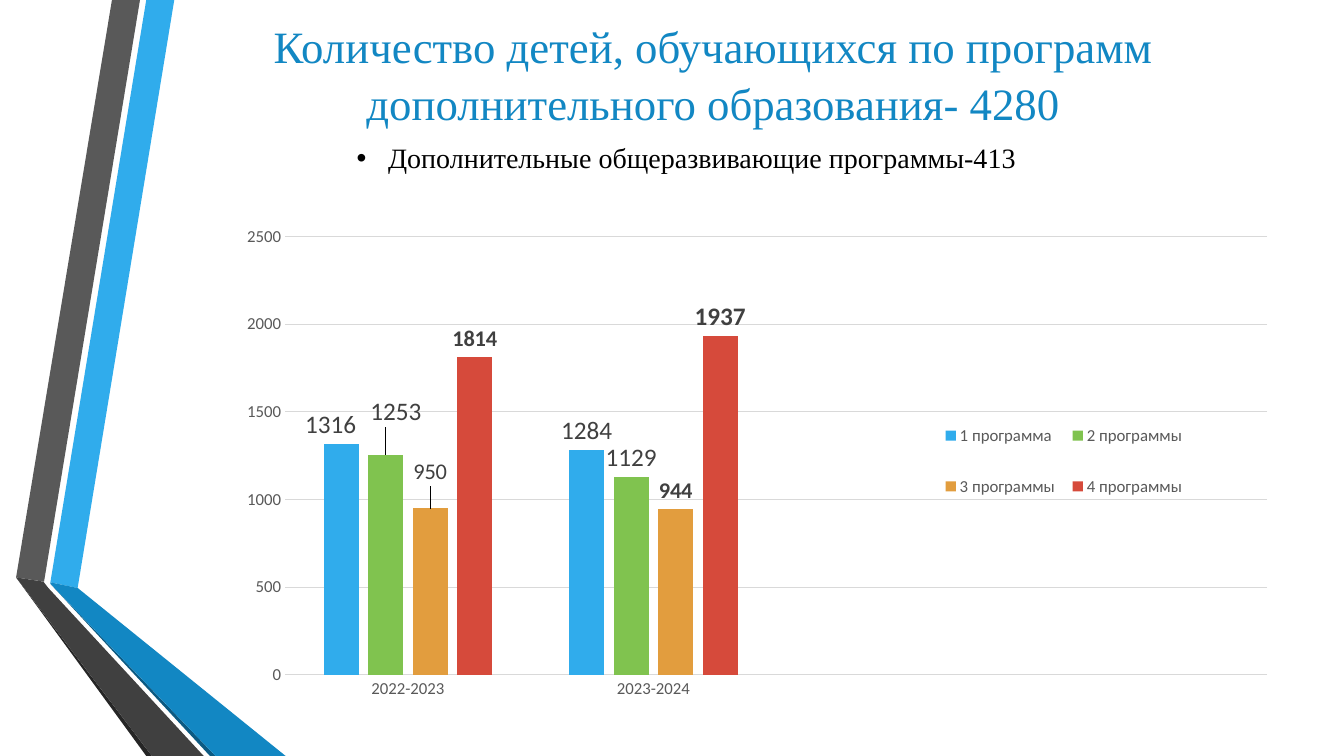
from pptx import Presentation
from pptx.chart.data import CategoryChartData
from pptx.dml.color import RGBColor
from pptx.enum import chart as ch, text as tx
from pptx.oxml import parse_xml
from pptx.oxml.ns import nsdecls
from pptx.util import Pt

COLORS = {
    "blue": "30ACEC", "deep_blue": "1287C3", "navy": "0C5A82",
    "gray": "595959", "dark_gray": "404040", "near_black": "262626",
    "green": "80C34F", "orange": "E29D3E", "red": "D64A3B",
    "grid": "D9D9D9", "black": "000000",
}
SERIF, SANS = "Times New Roman", "Calibri"

# Ribbon outlines in points, from back to front
RIBBONS = [
    ("blue", [(36, 416), (55.5, 420), (124.5, 0), (104.5, 0)]),
    ("gray", [(100, 0), (80, 0), (11.5, 412.5), (31.5, 415.5)]),
    ("near_black", [(11.5, 412.5), (104.5, 540), (108.5, 540)]),
    ("navy", [(36, 417), (150, 540), (154, 540)]),
    ("deep_blue", [(36, 416), (36, 417), (154, 540), (204, 540), (55.5, 420)]),
    ("dark_gray", [(145.5, 540), (34.5, 420), (31, 415.5), (11.5, 412.5), (108.5, 540)]),
]

YEARS = ["2022-2023", "2023-2024", "", ""]  # two empty slots hold the legend
# Name, colour, values, and per label: size, bold, shift (x, y), own text
PROGRAMS = [
    ("1 программа", "blue", (1316, 1284),
     [(18, False, (-0.01, 0), None), (18, False, None, None)]),
    ("2 программы", "green", (1253, 1129),
     [(18, False, (0.01, -0.04), None), (18, False, None, None)]),
    ("3 программы", "orange", (950, 944),
     [(16, False, (0, -0.03), None), (16, True, None, None)]),
    ("4 программы", "red", (1814, 1934),
     [(16, True, None, None), (18, True, None, "1937")]),
]


def rgb(name):
    return RGBColor.from_string(COLORS[name])


def style_font(font, face, size, color, bold=False):
    font.name, font.size, font.bold = face, Pt(size), bold
    font.color.rgb = rgb(color)


def add_ribbon(slide, color, points):
    start, *rest = [(Pt(x), Pt(y)) for x, y in points]
    builder = slide.shapes.build_freeform(*start)
    builder.add_line_segments(rest, close=True)
    ribbon = builder.convert_to_shape()
    ribbon.shadow.inherit = False
    ribbon.fill.solid()
    ribbon.fill.fore_color.rgb = rgb(color)
    ribbon.line.fill.background()


def fill_placeholder(holder, box, wording, size, color):
    holder.left, holder.top, holder.width, holder.height = map(Pt, box)
    frame = holder.text_frame
    frame.word_wrap = True
    frame.auto_size = tx.MSO_AUTO_SIZE.NONE
    frame.vertical_anchor = tx.MSO_ANCHOR.TOP
    paragraph = frame.paragraphs[0]
    paragraph.alignment = tx.PP_ALIGN.CENTER
    paragraph.space_before = Pt(0)
    run = paragraph.add_run()
    run.text = wording
    style_font(run.font, SERIF, size, color)
    return paragraph


def set_bullet(paragraph, indent):
    props = paragraph._p.get_or_add_pPr()
    props.set("marL", str(Pt(indent)))
    props.set("indent", str(-Pt(indent)))
    props.append(parse_xml(f'<a:buFont {nsdecls("a")} typeface="Arial"/>'))
    props.append(parse_xml(f'<a:buChar {nsdecls("a")} char="•"/>'))


def set_layout(parent, index, **settings):
    """Place a chart part by fractions of the chart area."""
    for old in parent.xpath("c:layout"):
        parent.remove(old)
    inner = "".join(f'<c:{key} val="{value}"/>' for key, value in settings.items())
    parent.insert(index, parse_xml(
        f'<c:layout {nsdecls("c")}><c:manualLayout>{inner}</c:manualLayout></c:layout>'))


def style_label(label, size, bold, shift, wording):
    if wording:
        run = label.text_frame.paragraphs[0].add_run()
        run.text = wording
        font = run.font
    else:
        font = label.font
    style_font(font, SANS, size, "dark_gray", bold)
    label.position = ch.XL_LABEL_POSITION.OUTSIDE_END
    if shift:
        set_layout(label._get_or_add_dLbl(), 1, x=shift[0], y=shift[1])


def style_axes(chart):
    for axis in (chart.category_axis, chart.value_axis):
        axis.major_tick_mark = axis.minor_tick_mark = ch.XL_TICK_MARK.NONE
        style_font(axis.tick_labels.font, SANS, 12, "gray")
    values = chart.value_axis
    values.minimum_scale, values.maximum_scale, values.major_unit = 0, 2500, 500
    values.format.line.fill.background()
    values.has_major_gridlines = True
    for line in (values.major_gridlines.format.line, chart.category_axis.format.line):
        line.color.rgb = rgb("grid")
        line.width = Pt(0.75)


def add_programs_chart(slide, box):
    data = CategoryChartData()
    data.categories = YEARS
    for name, _, counts, _ in PROGRAMS:
        data.add_series(name, counts + (None, None))
    chart = slide.shapes.add_chart(
        ch.XL_CHART_TYPE.COLUMN_CLUSTERED, *map(Pt, box), data).chart
    chart.has_title = False
    style_font(chart.font, SANS, 10, "black")
    style_axes(chart)

    # Columns and their labels
    plot = chart.plots[0]
    plot.gap_width, plot.overlap, plot.vary_by_categories = 219, -27, False
    for series, (_, color, _, labels) in zip(plot.series, PROGRAMS):
        series.invert_if_negative = False
        series.format.fill.solid()
        series.format.fill.fore_color.rgb = rgb(color)
        for i, label in enumerate(labels):
            style_label(series.points[i].data_label, *label)

    # Legend and plot area
    chart.has_legend = True
    chart.legend.position = ch.XL_LEGEND_POSITION.BOTTOM
    chart.legend.include_in_layout = False
    style_font(chart.legend.font, SANS, 12, "gray")
    set_layout(chart.legend._element, 1, xMode="edge", yMode="edge",
               x=0.68, y=0.47, w=0.25, h=0.22)
    plot_area = chart._chartSpace.xpath("c:chart/c:plotArea")[0]
    set_layout(plot_area, 0, layoutTarget="inner", xMode="edge", yMode="edge",
               x=0.058, y=0.206, w=0.942, h=0.73)


def main():
    prs = Presentation()
    prs.slide_width, prs.slide_height = Pt(960), Pt(540)
    slide = prs.slides.add_slide(prs.slide_layouts[1])

    # Side ribbons
    for color, points in RIBBONS:
        add_ribbon(slide, color, points)

    # Chart of children by number of programs
    add_programs_chart(slide, (160.5, 80.5, 745, 429))

    # Heading and list
    heading = fill_placeholder(
        slide.shapes.title, (137, 8, 745, 106.5),
        "Количество детей, обучающихся по программ дополнительного образования- 4280",
        32, "deep_blue")
    heading.line_spacing = 1.05
    programs_total = fill_placeholder(
        slide.placeholders[1], (160.5, 97, 659.5, 32),
        "Дополнительные общеразвивающие программы-413", 20, "black")
    set_bullet(programs_total, 22.5)

    prs.save("out.pptx")


if __name__ == "__main__":
    main()
